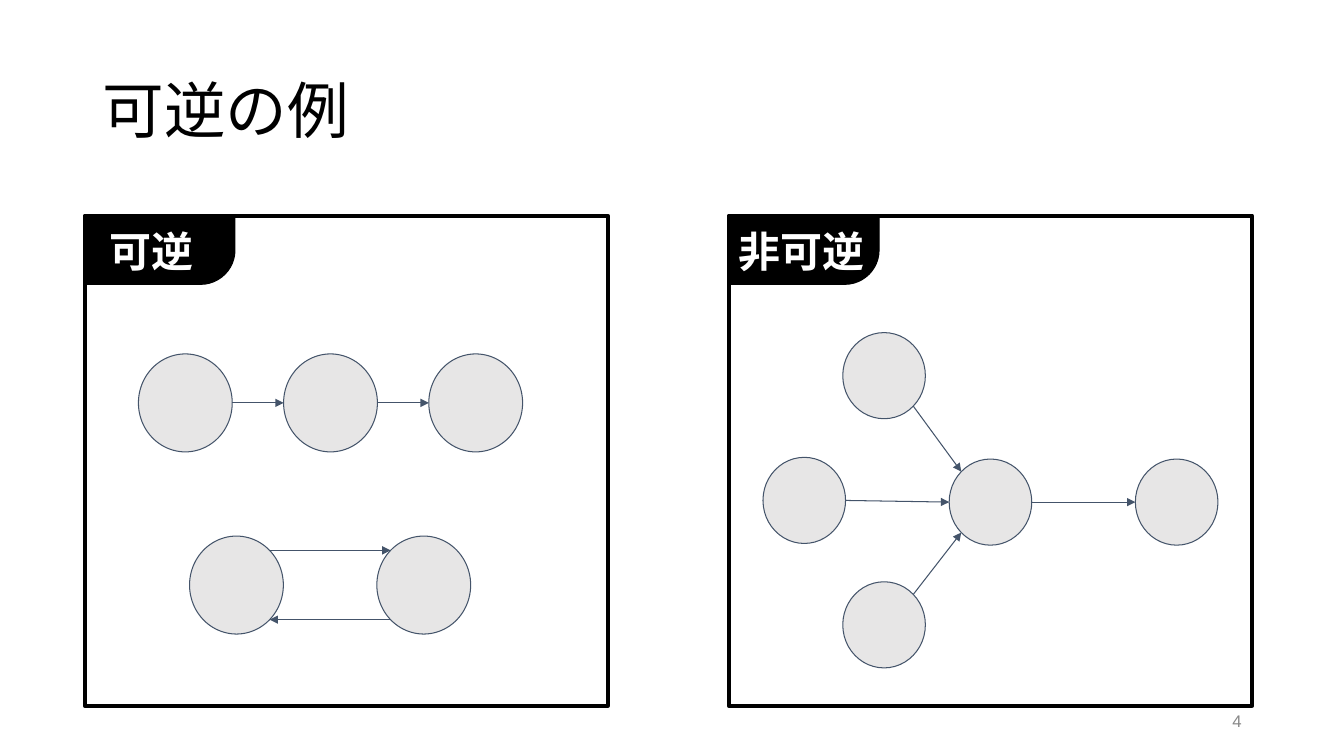
import math

from lxml import etree
from pptx import Presentation
from pptx.dml.color import RGBColor
from pptx.enum.lang import MSO_LANGUAGE_ID
from pptx.enum.shapes import MSO_CONNECTOR, MSO_SHAPE
from pptx.enum.text import MSO_ANCHOR, MSO_AUTO_SIZE, PP_ALIGN
from pptx.oxml.ns import qn
from pptx.util import Pt

RECT, OVAL, TAB = MSO_SHAPE.RECTANGLE, MSO_SHAPE.OVAL, MSO_SHAPE.ROUND_1_RECTANGLE
STRAIGHT = MSO_CONNECTOR.STRAIGHT
LEFT, RIGHT = PP_ALIGN.LEFT, PP_ALIGN.RIGHT
TOP, MIDDLE = MSO_ANCHOR.TOP, MSO_ANCHOR.MIDDLE
NO_FIT = MSO_AUTO_SIZE.NONE
JAPANESE = MSO_LANGUAGE_ID.JAPANESE

COLORS = {"black": "000000", "white": "FFFFFF", "node": "E7E6E6",
          "edge": "44546A", "number": "888888"}
FONT = "Arial"
PANEL_TOP, PANEL_W, PANEL_H = 154.1, 373.7, 350
TAB_W, TAB_H = 107.3, 49
BIG, SMALL = (67, 70), (59, 61.5)


def rgb(name):
    return RGBColor.from_string(COLORS[name])


def write(tf, text, size, color="black", bold=False, align=LEFT,
          anchor=TOP, inset=3.6, spacing=None):
    tf.word_wrap = True
    tf.auto_size = NO_FIT
    tf.vertical_anchor = anchor
    tf.margin_left = tf.margin_right = Pt(7.2)
    tf.margin_top = tf.margin_bottom = Pt(inset)
    p = tf.paragraphs[0]
    p.alignment = align
    p.line_spacing = spacing
    r = p.add_run()
    r.text = text
    r.font.name = FONT
    r.font.size = Pt(size)
    r.font.bold = bold
    r.font.color.rgb = rgb(color)
    r.font.language_id = JAPANESE


def site(node, degrees):
    """Point on the outline of a node, clockwise in degrees from its right side."""
    a = math.radians(degrees)
    return (node.left.pt + node.width.pt / 2 * (1 + math.cos(a)),
            node.top.pt + node.height.pt / 2 * (1 + math.sin(a)))


class SlideBuilder:
    def __init__(self, prs):
        self.s = prs.slides.add_slide(prs.slide_layouts[5])

    def title(self, text, x, y, w, h):
        sp = self.s.shapes.title
        sp.left, sp.top, sp.width, sp.height = Pt(x), Pt(y), Pt(w), Pt(h)
        write(sp.text_frame, text, 44, anchor=MIDDLE, spacing=0.9)

    def text(self, text, x, y, w, h, **fmt):
        sp = self.s.shapes.add_textbox(Pt(x), Pt(y), Pt(w), Pt(h))
        write(sp.text_frame, text, **fmt)

    def shape(self, kind, x, y, w, h, fill, line, width=0.75):
        sp = self.s.shapes.add_shape(kind, Pt(x), Pt(y), Pt(w), Pt(h))
        sp.shadow.inherit = False
        sp.fill.solid()
        sp.fill.fore_color.rgb = rgb(fill)
        sp.line.color.rgb = rgb(line)
        sp.line.width = Pt(width)
        return sp

    def panel(self, x, label, label_x):
        self.shape(RECT, x, PANEL_TOP, PANEL_W, PANEL_H, "white", "black", 3)
        tab = self.shape(TAB, x, PANEL_TOP, TAB_W, TAB_H, "black", "black")
        tab.adjustments[0] = 0.5
        tab.rotation = 180
        tab.element.spPr.xfrm.set("flipH", "1")
        self.text(label, label_x, PANEL_TOP, TAB_W, 55.4, size=30,
                  color="white", bold=True, inset=7.2)

    def node(self, x, y, size):
        return self.shape(OVAL, x, y, *size, "node", "edge")

    def arrow(self, a, a_deg, b, b_deg):
        """Arrow between two nodes, each end at an angle on the outline."""
        ends = [Pt(v) for v in site(a, a_deg) + site(b, b_deg)]
        c = self.s.shapes.add_connector(STRAIGHT, *ends)
        c.line.color.rgb = rgb("edge")
        c.line.width = Pt(0.75)
        etree.SubElement(c.line._get_or_add_ln(), qn("a:tailEnd"), type="triangle")
        etree.SubElement(c.element.spPr, qn("a:effectLst"))


def main():
    prs = Presentation()
    prs.slide_width, prs.slide_height = Pt(960), Pt(540)
    b = SlideBuilder(prs)
    b.title("可逆の例", 66, 28.8, 828, 104.4)
    b.panel(60.5, "可逆", 71.3)
    b.panel(520.6, "非可逆", 520.6)

    chain = [b.node(98.9 + 103.7 * i, 252.8, BIG) for i in range(3)]
    for start, end in zip(chain, chain[1:]):
        b.arrow(start, 0, end, 180)

    first, second = [b.node(x, 382.9, BIG) for x in (135.4, 269.2)]
    b.arrow(first, -45, second, 225)
    b.arrow(second, 135, first, 45)

    hub, out = [b.node(x, 327.9, SMALL) for x in (678, 811)]
    for x, y, leave, arrive in ((602, 237.6, 45, 225),
                                (545, 326.7, 0, 180),
                                (602, 415.6, -45, 135)):
        b.arrow(b.node(x, y, SMALL), leave, hub, arrive)
    b.arrow(hub, 0, out, 180)

    b.text("4", 678, 500.5, 216, 28.8, size=12, color="number",
           align=RIGHT, anchor=MIDDLE)
    prs.save("out.pptx")


if __name__ == "__main__":
    main()
